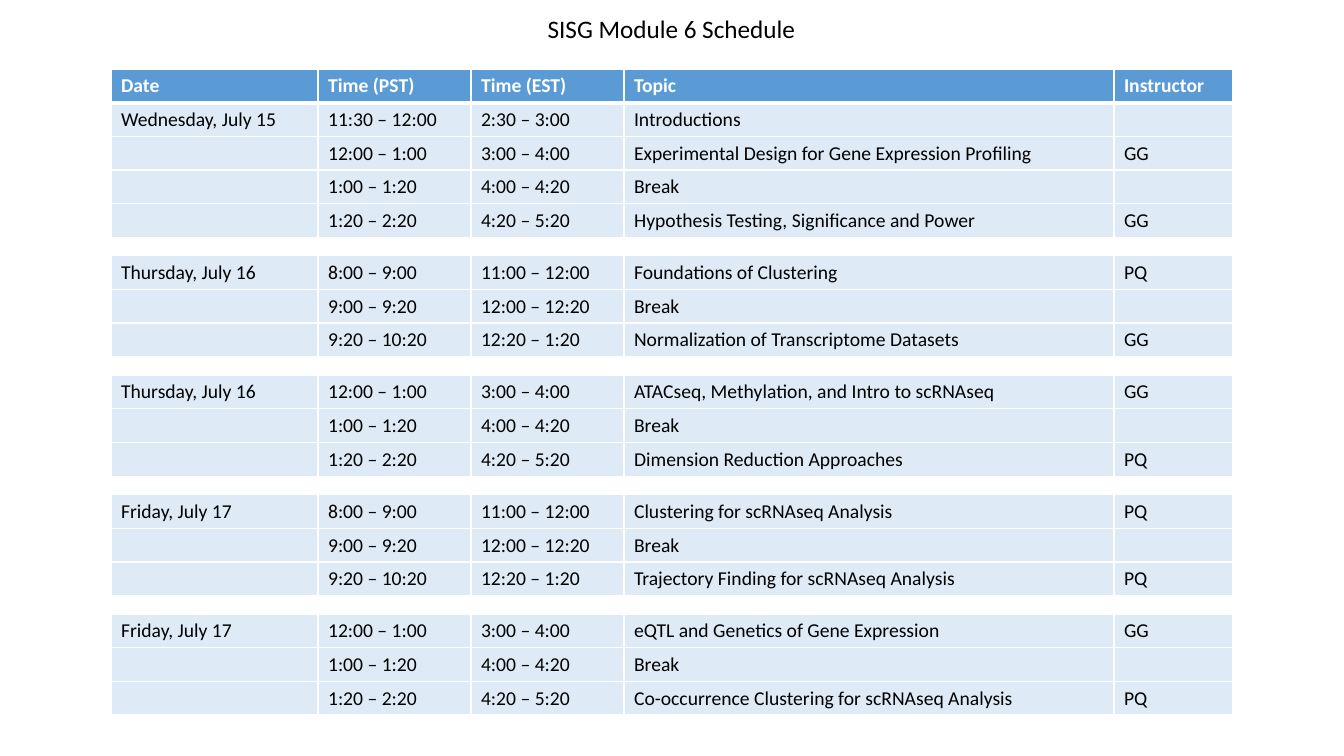
from lxml import etree
from pptx import Presentation
from pptx.dml.color import RGBColor
from pptx.enum.text import MSO_ANCHOR, MSO_AUTO_SIZE, PP_ALIGN
from pptx.oxml.ns import qn
from pptx.util import Pt

CENTER = PP_ALIGN.CENTER
TOP = MSO_ANCHOR.TOP
FIT_SHAPE = MSO_AUTO_SIZE.SHAPE_TO_FIT_TEXT
TITLE_ONLY = 5
EMU_PER_PX = 914400 / 100.8

HEADER = ("Date", "Time (PST)", "Time (EST)", "Topic", "Instructor")
COLUMN_WIDTHS = (207, 153, 153, 490, 119)

# Each block: date, then sessions of Pacific time, Eastern time, topic, instructor
BLOCKS = (
    ("Wednesday, July 15", (
        ("11:30 – 12:00", "2:30 – 3:00", "Introductions", ""),
        ("12:00 – 1:00", "3:00 – 4:00", "Experimental Design for Gene Expression Profiling", "GG"),
        ("1:00 – 1:20", "4:00 – 4:20", "Break", ""),
        ("1:20 – 2:20", "4:20 – 5:20", "Hypothesis Testing, Significance and Power", "GG"))),
    ("Thursday, July 16", (
        ("8:00 – 9:00", "11:00 – 12:00", "Foundations of Clustering", "PQ"),
        ("9:00 – 9:20", "12:00 – 12:20", "Break", ""),
        ("9:20 – 10:20", "12:20 – 1:20", "Normalization of Transcriptome Datasets", "GG"))),
    ("Thursday, July 16", (
        ("12:00 – 1:00", "3:00 – 4:00", "ATACseq, Methylation, and Intro to scRNAseq", "GG"),
        ("1:00 – 1:20", "4:00 – 4:20", "Break", ""),
        ("1:20 – 2:20", "4:20 – 5:20", "Dimension Reduction Approaches", "PQ"))),
    ("Friday, July 17", (
        ("8:00 – 9:00", "11:00 – 12:00", "Clustering for scRNAseq Analysis", "PQ"),
        ("9:00 – 9:20", "12:00 – 12:20", "Break", ""),
        ("9:20 – 10:20", "12:20 – 1:20", "Trajectory Finding for scRNAseq Analysis", "PQ"))),
    ("Friday, July 17", (
        ("12:00 – 1:00", "3:00 – 4:00", "eQTL and Genetics of Gene Expression", "GG"),
        ("1:00 – 1:20", "4:00 – 4:20", "Break", ""),
        ("1:20 – 2:20", "4:20 – 5:20", "Co-occurrence Clustering for scRNAseq Analysis", "PQ"))),
)


def px(length):
    return round(length * EMU_PER_PX)


def color(hex_string):
    return RGBColor.from_string(hex_string)


def schedule_rows():
    """Header and session rows, with None for the gap between blocks."""
    rows = [HEADER]
    for index, (date, sessions) in enumerate(BLOCKS):
        if index:
            rows.append(None)
        for number, session in enumerate(sessions):
            rows.append((date if number == 0 else "",) + session)
    return rows


class ScheduleSlide:
    font = "Calibri"
    ink = "000000"
    white = "FFFFFF"
    header_fill = "5B9BD5"
    session_fill = "DEEBF7"
    title_size, cell_size, gap_size = 18, 14, 5
    row_height, gap_height = 33, 18

    def __init__(self, presentation):
        layout = presentation.slide_layouts[TITLE_ONLY]
        self.slide = presentation.slides.add_slide(layout)

    def add_run(self, paragraph, text, size, ink, bold=False):
        run = paragraph.add_run()
        run.text = text
        run.font.name = self.font
        run.font.size = Pt(size)
        run.font.bold = bold
        run.font.color.rgb = color(ink)

    def add_title(self, text, left, top, width, height):
        title = self.slide.shapes.title
        title.left, title.top = px(left), px(top)
        title.width, title.height = px(width), px(height)
        frame = title.text_frame
        frame.word_wrap = False
        frame.auto_size = FIT_SHAPE
        frame.vertical_anchor = TOP
        paragraph = frame.paragraphs[0]
        paragraph.alignment = CENTER
        self.add_run(paragraph, text, self.title_size, self.ink)

    def add_borders(self, cell, top, bottom):
        properties = cell._tc.get_or_add_tcPr()
        for side, width in (("L", 1), ("R", 1), ("T", top), ("B", bottom)):
            line = etree.SubElement(properties, qn("a:ln" + side), w=str(Pt(width)))
            fill = etree.SubElement(line, qn("a:solidFill"))
            etree.SubElement(fill, qn("a:srgbClr"), val=self.white)

    def fill_cell(self, cell, text, fill, size, ink, bold):
        cell.fill.solid()
        cell.fill.fore_color.rgb = color(fill)
        paragraph = cell.text_frame.paragraphs[0]
        if text:
            self.add_run(paragraph, text, size, ink, bold)
        else:
            # An empty cell takes its line height from the paragraph end
            end = etree.SubElement(paragraph._p, qn("a:endParaRPr"), sz=str(size * 100))
            etree.SubElement(end, qn("a:latin"), typeface=self.font)

    def add_table(self, rows, left, top, height):
        frame = self.slide.shapes.add_table(
            len(rows), len(COLUMN_WIDTHS), px(left), px(top),
            px(sum(COLUMN_WIDTHS)), px(height))
        table = frame.table
        table.horz_banding = False
        for column, width in zip(table.columns, COLUMN_WIDTHS):
            column.width = px(width)
        for index, values in enumerate(rows):
            is_header, is_gap = index == 0, values is None
            table.rows[index].height = px(self.gap_height if is_gap else self.row_height)
            fill = (self.header_fill if is_header
                    else self.white if is_gap else self.session_fill)
            size = self.gap_size if is_gap else self.cell_size
            ink = self.white if is_header else self.ink
            for cell, text in zip(table.rows[index].cells, values or [""] * len(HEADER)):
                self.add_borders(cell, top=3 if index == 1 else 1,
                                 bottom=3 if is_header else 1)
                self.fill_cell(cell, text, fill, size, ink, bold=is_header)
        frame.height = px(height)


def main():
    presentation = Presentation()
    presentation.slide_width, presentation.slide_height = px(1344), px(756)
    schedule = ScheduleSlide(presentation)

    # Title above the table
    schedule.add_title("SISG Module 6 Schedule", 536, 8, 271, 40)

    # Schedule of all blocks
    schedule.add_table(schedule_rows(), left=111, top=69, height=645)

    presentation.save("out.pptx")


if __name__ == "__main__":
    main()
